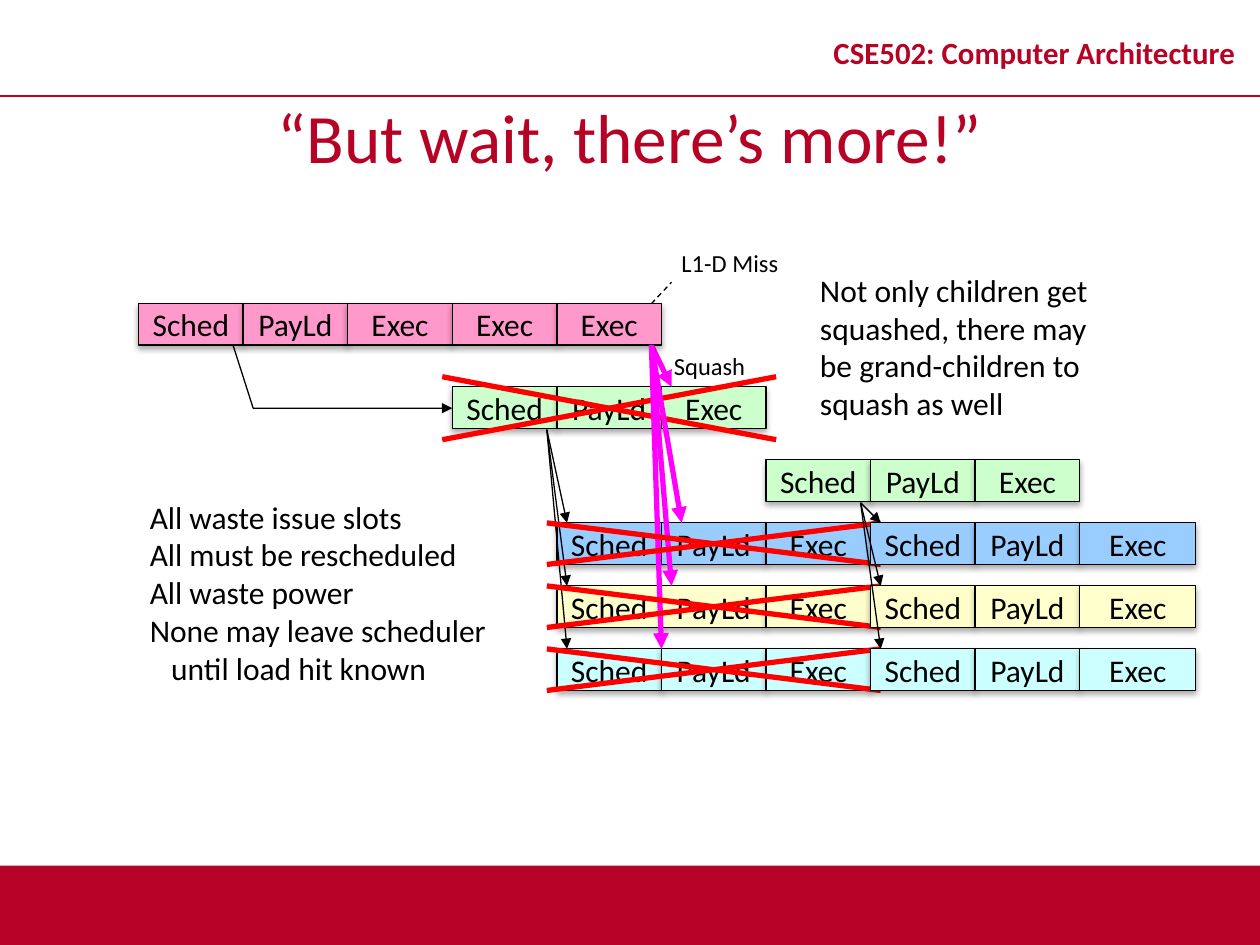
from lxml.etree import SubElement
from pptx import Presentation
from pptx.dml.color import RGBColor
from pptx.enum.dml import MSO_LINE_DASH_STYLE as DASH
from pptx.enum.shapes import MSO_CONNECTOR, MSO_SHAPE
from pptx.enum.text import MSO_ANCHOR as ANCHOR, MSO_AUTO_SIZE as FIT, PP_ALIGN as ALIGN
from pptx.oxml import parse_xml
from pptx.oxml.ns import nsdecls, qn
from pptx.util import Inches, Pt

COLORS = {
    "red": "B60225", "black": "000000", "cross": "FF0000", "squash": "FF00FF",
    "load": "FF99CC", "child": "CCFFCC",
    "blue": "99CCFF", "yellow": "FFFFCC", "cyan": "CCFFFF",
}
STAGE_W, STAGE_H = 0.83, 0.33
LOAD_LEFT, LOAD_TOP = 1.1, 2.41
CHILD_TOP, RETRY_TOP = 3.07, 3.65
GRANDCHILDREN = [("blue", 4.15), ("yellow", 4.65), ("cyan", 5.15)]
ISSUE = ["Sched", "PayLd", "Exec"]


def write(shape, text, size=18, color="black", bold=False, align=ALIGN.LEFT,
          anchor=ANCHOR.TOP, wrap=False, spacing=None, fit=FIT.NONE):
    """Fill a shape with text, one paragraph per line."""
    frame = shape.text_frame
    frame.word_wrap = wrap
    frame.auto_size = fit
    frame.vertical_anchor = anchor
    for number, line in enumerate(text.split("\n")):
        para = frame.add_paragraph() if number else frame.paragraphs[0]
        para.alignment = align
        para.line_spacing = spacing
        span = para.add_run()
        span.text = line
        span.font.name = "Calibri"
        span.font.size = Pt(size)
        span.font.bold = bold
        span.font.color.rgb = RGBColor.from_string(COLORS[color])
    return frame


def style_line(shape, color, width, arrow=False, dashed=False):
    """Colour a line, drop its theme shadow and add an arrowhead or dashes."""
    shape.line.color.rgb = RGBColor.from_string(COLORS[color])
    shape.line.width = Pt(width)
    if dashed:
        shape.line.dash_style = DASH.DASH
    if arrow:
        SubElement(shape.line._get_or_add_ln(), qn("a:tailEnd"), type="triangle")
    if shape._element.spPr.find(qn("a:effectLst")) is None:
        SubElement(shape._element.spPr, qn("a:effectLst"))


deck = Presentation()
deck.slide_width, deck.slide_height = Inches(10), Inches(7.5)
page = deck.slides.add_slide(deck.slide_layouts[6])

# Footer band
band = page.shapes.add_shape(MSO_SHAPE.RECTANGLE, 0, Inches(6.87), Inches(10), Inches(0.63))
band.shadow.inherit = False
band.fill.solid()
band.fill.fore_color.rgb = RGBColor.from_string(COLORS["red"])
band.line.fill.background()

# Lines: start, end, colour, width, options
arrow = {"arrow": True}
child_cross = [
    ((3.51, 3.49), (6.16, 2.99), "cross", 3, {}),
    ((3.51, 2.99), (6.16, 3.49), "cross", 3, {}),
]
wakeups = [((4.34, 3.41), (4.5, top), "black", 0.75, arrow) for _, top in GRANDCHILDREN]
squashes = [((5.17, 2.74), (5.41 - 0.08 * index, top), "squash", 3, arrow)
            for index, (_, top) in enumerate(GRANDCHILDREN)]
crosses = [((4.34, top + start), (6.99, top + STAGE_H - start), "cross", 3, {})
           for _, top in GRANDCHILDREN for start in (STAGE_H, 0)]
retries = [((6.83, 3.99), (6.99, top), "black", 0.75, arrow) for _, top in GRANDCHILDREN]

# Layers from back to front: rows (colour, column, top, stages, last width), then lines
layers = [
    ([], [((0, 0.76), (10, 0.76), "red", 1, {})]),
    ([("child", 3, CHILD_TOP, ISSUE, STAGE_W)],
     [((5.17, 2.74), (5.33, 3.07), "squash", 3, arrow)]),
    ([("load", 0, LOAD_TOP, ISSUE + ["Exec", "Exec"], STAGE_W)],
     child_cross + [((5.17, 2.41), (5.33, 2.24), "black", 0.75, {"dashed": True})]),
    ([(color, 4, top, ISSUE, STAGE_W) for color, top in GRANDCHILDREN],
     wakeups + squashes + crosses),
    ([(color, 7, top, ISSUE, 0.92) for color, top in GRANDCHILDREN]
     + [("child", 6, RETRY_TOP, ISSUE, STAGE_W)], retries),
]
for rows, lines in layers:
    for color, column, top, stages, last_width in rows:
        for index, stage in enumerate(stages):
            left = LOAD_LEFT + (column + index) * STAGE_W
            width = last_width if index == len(stages) - 1 else STAGE_W
            box = page.shapes.add_shape(MSO_SHAPE.RECTANGLE, Inches(left), Inches(top),
                                        Inches(width), Inches(STAGE_H))
            box.fill.solid()
            box.fill.fore_color.rgb = RGBColor.from_string(COLORS[color])
            style_line(box, "black", 0.75)
            box._element.spPr.find(qn("a:effectLst")).append(parse_xml(
                f'<a:outerShdw {nsdecls("a")} blurRad="{Pt(3.5)}" dist="{Pt(2.2)}" '
                'dir="5400000" rotWithShape="0"><a:srgbClr val="000000">'
                '<a:alpha val="32000"/></a:srgbClr></a:outerShdw>'))
            write(box, stage, align=ALIGN.CENTER, anchor=ANCHOR.MIDDLE)
    for start, end, color, width, options in lines:
        line = page.shapes.add_connector(MSO_CONNECTOR.STRAIGHT,
                                         *[Inches(value) for value in start + end])
        style_line(line, color, width, **options)

# Bent arrow from the load to its child
builder = page.shapes.build_freeform(Inches(1.85), Inches(2.74))
builder.add_line_segments([(Inches(2.01), Inches(3.24)), (Inches(3.59), Inches(3.24))],
                          close=False)
bend = builder.convert_to_shape()
bend.fill.background()
style_line(bend, "black", 0.75, arrow=True)

# Header, title and notes beside the pipeline
centred = {"color": "red", "align": ALIGN.CENTER, "anchor": ANCHOR.MIDDLE, "wrap": True}
label = {"size": 14, "fit": FIT.SHAPE_TO_FIT_TEXT}
texts = [
    ((6.42, 0.13, 3.58, 0.63), "CSE502: Computer Architecture",
     {"size": 17.6, "bold": True, "spacing": 0.8, **centred}),
    ((0, 0.76, 10, 0.63), "“But wait, there’s more!”", {"size": 39.6, **centred}),
    ((5.31, 1.92, 1.01, 0.34), "L1-D Miss", label),
    ((5.25, 2.74, 0.78, 0.33), "Squash", label),
    ((6.41, 2.1, 2.57, 1.3),
     "Not only children get\nsquashed, there may be grand-children to squash as well",
     {"wrap": True}),
    ((1.09, 3.9, 2.88, 1.62),
     "All waste issue slots\nAll must be rescheduled\nAll waste power\n"
     "None may leave scheduler\nuntil load hit known", {}),
]
for place, text, options in texts:
    box = page.shapes.add_textbox(*[Inches(value) for value in place])
    frame = write(box, text, **options)

# The last note's closing line is indented
frame.paragraphs[-1]._p.get_or_add_pPr().set("marL", str(Inches(0.17)))

deck.save("out.pptx")
